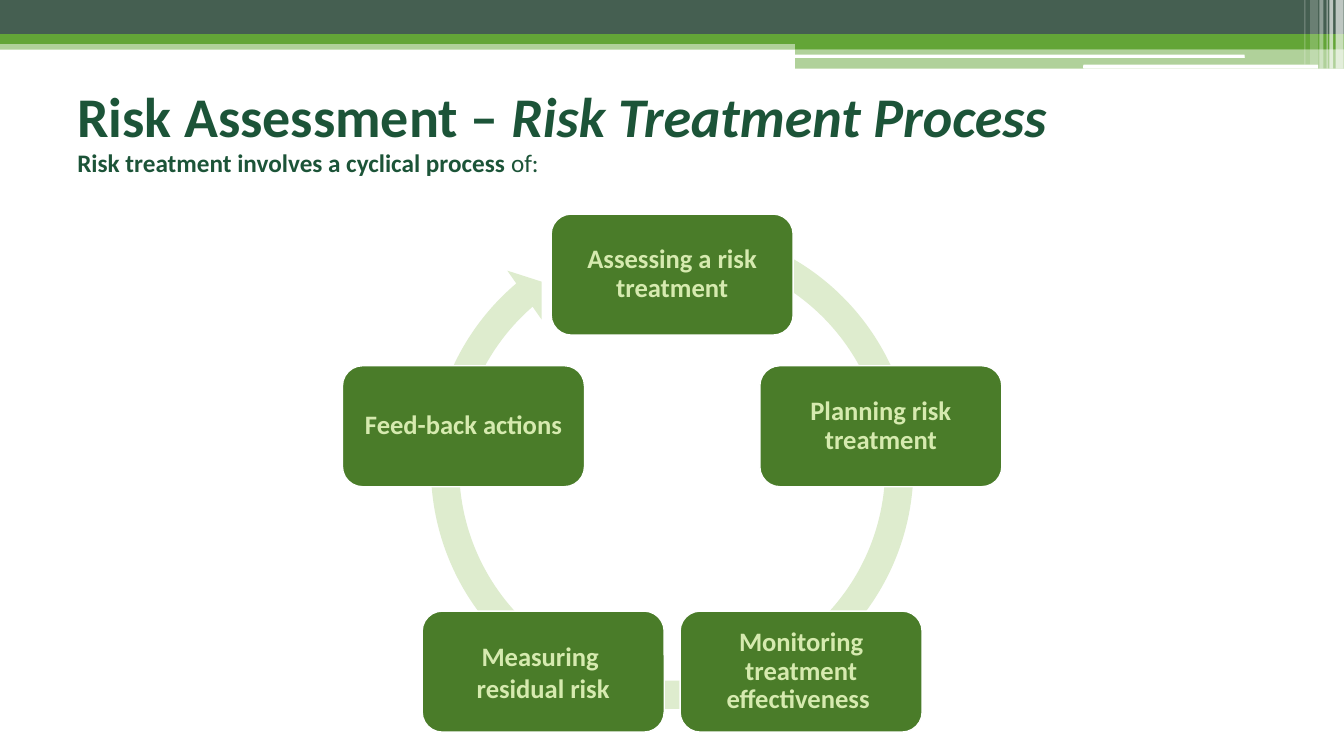
from math import cos, pi, sin

from lxml.etree import SubElement
from pptx import Presentation
from pptx.dml.color import RGBColor
from pptx.enum.shapes import MSO_SHAPE
from pptx.enum.text import MSO_ANCHOR, PP_ALIGN
from pptx.oxml.ns import qn
from pptx.util import Cm, Pt

WHITE = RGBColor(0xFF, 0xFF, 0xFF)
SLATE = RGBColor(0x45, 0x5F, 0x51)
LEAF = RGBColor(0x63, 0xA5, 0x37)
MOSS = RGBColor(0x4A, 0x7C, 0x29)
PALE = RGBColor(0xDE, 0xEC, 0xCE)
LIME = RGBColor(0xD6, 0xEA, 0xAF)
PINE = RGBColor(0x1C, 0x54, 0x38)

# Content: heading runs as (text, font changes)
TITLE = [("Risk Assessment – ", {}), ("Risk Treatment Process", {"italic": True})]
LEAD = [("Risk treatment involves a cyclical process ", {}), ("of:", {"bold": False})]
STEPS = [  # clockwise from the top, one list of paragraphs each
    ["Assessing a risk treatment"],
    ["Planning risk treatment"],
    ["Monitoring treatment effectiveness "],
    ["Measuring ", "residual risk"],
    ["Feed-back actions"],
]

# Top band: left, top, width, height in cm, colour, opacity in percent
WIDE, HIGH = 33.87, 19.05
HALF = 20.04
BANDS = [
    (0, 1.02, WIDE, 0.23, LEAF, 50),
    (0, 0, WIDE, 0.86, SLATE, 100),
    (0, 0.86, WIDE, 0.25, LEAF, 100),
    (HALF, 0.99, WIDE - HALF, 0.25, LEAF, 100),
    (HALF, 1.23, WIDE - HALF, 0.5, LEAF, 50),
]
SLOTS = [
    (20.02, 1.38, 11.35, 0.08, WHITE, 100),
    (27.3, 1.63, 5.92, 0.1, WHITE, 100),
]
BARS = [
    (33.66, 0, 0.2, 1.73, WHITE, 65),
    (33.5, 0, 0.1, 1.73, WHITE, 65),
    (33.43, 0, 0.03, 1.73, WHITE, 60),
    (33.25, 0, 0.1, 1.73, WHITE, 40),
    (33.02, 0, 0.2, 1.63, WHITE, 20),
    (32.87, 0, 0.03, 1.63, WHITE, 30),
]

# Cycle geometry in cm
MID_X, MID_Y, RADIUS = 16.94, 12.45, 5.53
BOX_W, BOX_H = 6.1, 3.05
RING, RING_TOP = 12.95, 5.31
BEND = [0.055, 3.307, 137.66, 173.92, 0.058]

HEAD = {"name": "Calibri", "size": Pt(40), "bold": True}
SUB = {**HEAD, "size": Pt(18)}
LABEL = {**HEAD, "size": Pt(19)}
INSET = {f"margin_{side}": Cm(0.2) for side in ("left", "right", "top", "bottom")}


def put(item, looks):
    for key, value in looks.items():
        setattr(item, key, value)


def draw(shapes, kind, left, top, width, height, color, alpha=100):
    shape = shapes.add_shape(kind, Cm(left), Cm(top), Cm(width), Cm(height))
    shape.shadow.inherit = False
    shape.fill.solid()
    shape.fill.fore_color.rgb = color
    shape.line.fill.background()
    if alpha < 100:
        tint = shape.fill._xPr.find(".//" + qn("a:srgbClr"))
        SubElement(tint, qn("a:alpha")).set("val", str(alpha * 1000))
    return shape


def write(para, text, looks, color):
    run = para.add_run()
    run.text = text
    put(run.font, looks)
    run.font.color.rgb = color


def heading(shapes, place, runs, looks, frame, layout):
    box = shapes.add_textbox(*map(Cm, place))
    put(box.text_frame, frame)
    para = box.text_frame.paragraphs[0]
    put(para, {"alignment": PP_ALIGN.JUSTIFY, **layout})
    for text, change in runs:
        write(para, text, {**looks, **change}, PINE)


def step(shapes, index, lines):
    angle = 2 * pi * index / len(STEPS)
    left = MID_X + RADIUS * sin(angle) - BOX_W / 2
    top = MID_Y - RADIUS * cos(angle) - BOX_H / 2
    box = draw(shapes, MSO_SHAPE.ROUNDED_RECTANGLE, left, top, BOX_W, BOX_H, MOSS)
    box.line.color.rgb = WHITE
    box.line.width = Pt(1)
    frame = box.text_frame
    put(frame, {"word_wrap": True, "vertical_anchor": MSO_ANCHOR.MIDDLE, **INSET})
    for number, line in enumerate(lines):
        para = frame.add_paragraph() if number else frame.paragraphs[0]
        put(para, {"alignment": PP_ALIGN.CENTER,
                   "line_spacing": 0.9 if len(lines) == 1 else 1.0})
        write(para, line, LABEL, LIME)


def main():
    deck = Presentation()
    put(deck, {"slide_width": Cm(WIDE), "slide_height": Cm(HIGH)})
    shapes = deck.slides.add_slide(deck.slide_layouts[6]).shapes

    # Top band
    for band in BANDS:
        draw(shapes, MSO_SHAPE.RECTANGLE, *band)
    for slot in SLOTS:
        draw(shapes, MSO_SHAPE.ROUNDED_RECTANGLE, *slot)
    for bar in BARS:
        draw(shapes, MSO_SHAPE.RECTANGLE, *bar)

    # Headings
    heading(shapes, (1.7, 1.42, 30.48, 2.97), TITLE, HEAD,
            {"word_wrap": True, "vertical_anchor": MSO_ANCHOR.MIDDLE}, {})
    heading(shapes, (1.7, 3.48, 12.22, 1.09), LEAD, SUB,
            {"word_wrap": False}, {"line_spacing": 1.14, "space_after": Pt(3)})

    # Cycle
    cycle = shapes.add_group_shape().shapes
    ring = draw(cycle, MSO_SHAPE.CIRCULAR_ARROW, MID_X - RING / 2, RING_TOP,
                RING, RING, PALE)
    for index, value in enumerate(BEND):
        ring.adjustments[index] = value
    for index, lines in enumerate(STEPS):
        step(cycle, index, lines)

    deck.save("out.pptx")


if __name__ == "__main__":
    main()
